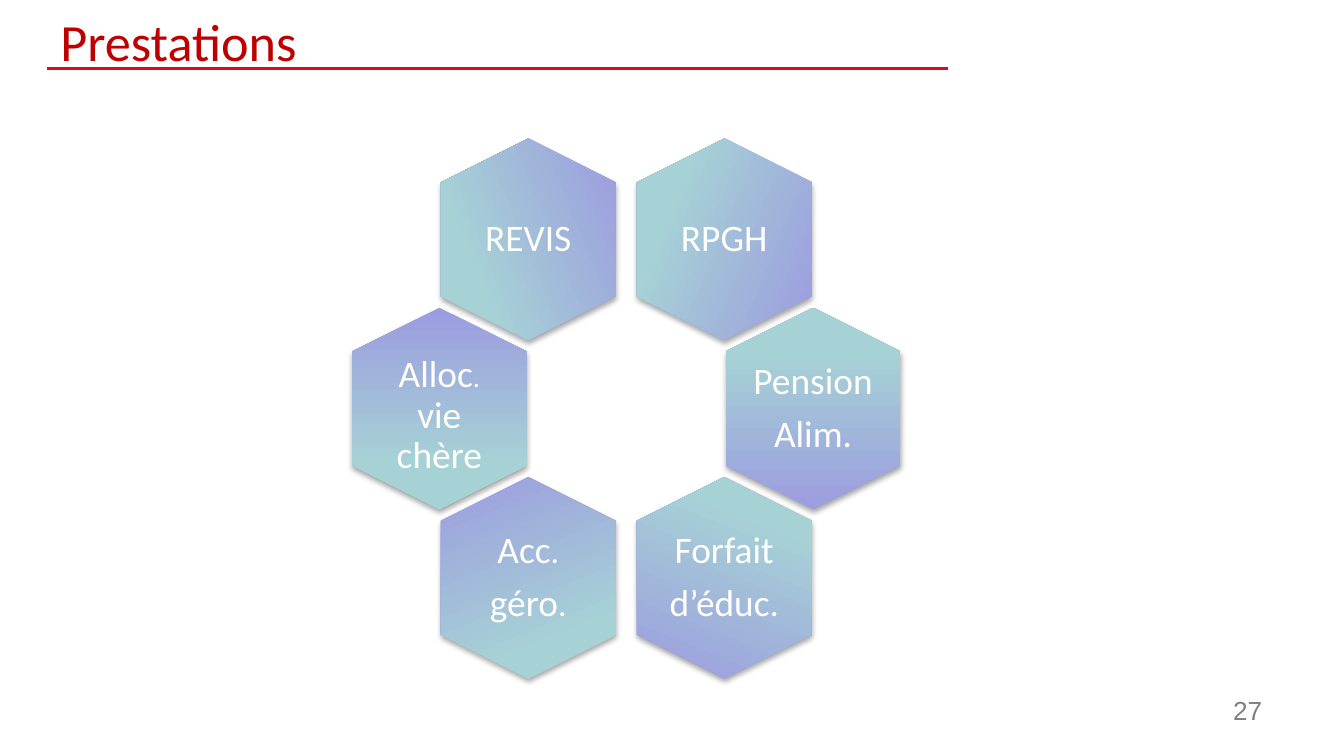
"""Build the "Prestations" slide: a ring of six hexagons."""
from lxml import etree
from pptx import Presentation
from pptx.dml.color import RGBColor
from pptx.enum.shapes import MSO_CONNECTOR, MSO_SHAPE
from pptx.enum.text import MSO_ANCHOR, MSO_AUTO_SIZE, PP_ALIGN
from pptx.oxml import parse_xml
from pptx.oxml.ns import nsdecls, qn
from pptx.util import Pt

LINE, HEXAGON = MSO_CONNECTOR.STRAIGHT, MSO_SHAPE.HEXAGON
MIDDLE, TOP = MSO_ANCHOR.MIDDLE, MSO_ANCHOR.TOP
LEFT, CENTER, RIGHT = PP_ALIGN.LEFT, PP_ALIGN.CENTER, PP_ALIGN.RIGHT

WHITE = RGBColor(0xFF, 0xFF, 0xFF)
DARK_RED = RGBColor(0xBF, 0x00, 0x00)
RED = RGBColor(0xE4, 0x05, 0x20)
GREY = RGBColor(0x80, 0x80, 0x80)
LILAC = RGBColor(0x9C, 0x9C, 0xDF)
AQUA = RGBColor(0xA6, 0xD2, 0xD5)

TITLE = "Prestations"
PAGE = "27"
# column, row, gradient angle, inset, drop, paragraphs of (text, size) runs
HEXAGONS = [
    (-0.5, -1, 68, 6, 0, [[("REVIS", 20)]]),
    (0.5, -1, 112, 0, 0, [[("RPGH", 20)]]),
    (-1, 0, 0, 6, 4, [[("Alloc", 20), (". ", 15), ("vie", 20), (" ", 15), ("chère", 20)]]),
    (1, 0, 180, 0, 0, [[("Pension", 20)], [("Alim.", 20)]]),
    (-0.5, 1, 338, 6, 0, [[("Acc", 20), (".", 18)], [("géro", 20), (".", 18)]]),
    (0.5, 1, 202, 0, 0, [[("Forfait", 20)], [("d’éduc", 20), (".", 19)]]),
]
CENTER_X, CENTER_Y = 335.5, 218.9
COLUMN_X = {-1: -100.1, -0.5: -52.5, 0.5: 52.5, 1: 100.1}
ROW_STEP = 90.7
HEX_W, HEX_H = 108, 93.6
LABEL_W, LABEL_H = 64.8, 74.2
SHADOW = (
    f'<a:effectLst {nsdecls("a")}><a:outerShdw blurRad="{Pt(3.1)}" dist="{Pt(1.8)}" '
    'dir="5400000" rotWithShape="0"><a:srgbClr val="000000"><a:alpha val="35000"/>'
    "</a:srgbClr></a:outerShdw></a:effectLst>"
)


def centered(x, y, w, h):
    return [Pt(v) for v in (x - w / 2, y - h / 2, w, h)]


def write(tf, paragraphs, font, color, align, anchor, inset=None):
    tf.word_wrap = True
    tf.auto_size = MSO_AUTO_SIZE.NONE
    tf.vertical_anchor = anchor
    if inset is not None:
        for side in ("left", "right", "top", "bottom"):
            setattr(tf, f"margin_{side}", Pt(inset))
    for i, runs in enumerate(paragraphs):
        p = tf.add_paragraph() if i else tf.paragraphs[0]
        p.alignment = align
        for text, size in runs:
            r = p.add_run()
            r.text = text
            for name, value in {"name": font, "size": Pt(size)}.items():
                setattr(r.font, name, value)
            r.font.color.rgb = color


def add_hexagon(s, x, y, angle):
    sp = s.shapes.add_shape(HEXAGON, *centered(x, y, HEX_W, HEX_H))
    sp.rotation = 90
    sp.adjustments[0] = 0.25
    sp.line.fill.background()
    sp.fill.gradient()
    sp.fill.gradient_angle = -angle % 360
    stops = sp.fill.gradient_stops
    for stop, position, color in zip(stops, (0, 0.78), (LILAC, AQUA)):
        stop.position = position
        stop.color.rgb = color
    sp._element.spPr.append(parse_xml(SHADOW))


def add_label(s, x, y, inset, paragraphs):
    tf = s.shapes.add_textbox(*centered(x, y, LABEL_W, LABEL_H)).text_frame
    write(tf, paragraphs, "Calibri", WHITE, CENTER, MIDDLE, inset)
    for p in tf.paragraphs:
        p.line_spacing = 0.9
        p.space_after = Pt(7)


def main():
    prs = Presentation()
    prs.slide_width, prs.slide_height = Pt(720), Pt(405)
    s = prs.slides.add_slide(prs.slide_layouts[5])

    rule = s.shapes.add_connector(LINE, Pt(507.6), Pt(36.7), Pt(25.2), Pt(36.7))
    rule.line.color.rgb = RED
    rule.line.width = Pt(1.5)
    etree.SubElement(rule._element.spPr, qn("a:effectLst"))

    title = s.shapes.title
    title.left, title.top, title.width, title.height = Pt(25.2), Pt(7.2), Pt(487.4), Pt(29.5)
    write(title.text_frame, [[(TITLE, 28)]], "Calibri", DARK_RED, LEFT, MIDDLE)

    number = s.shapes.add_textbox(Pt(632.2), Pt(368.6), Pt(51.1), Pt(29.5))
    write(number.text_frame, [[(PAGE, 14)]], "Arial", GREY, RIGHT, TOP)

    for column, row, angle, inset, drop, paragraphs in HEXAGONS:
        x, y = CENTER_X + COLUMN_X[column], CENTER_Y + row * ROW_STEP
        add_hexagon(s, x, y, angle)
        add_label(s, x, y + drop, inset, paragraphs)

    prs.save("out.pptx")


if __name__ == "__main__":
    main()
